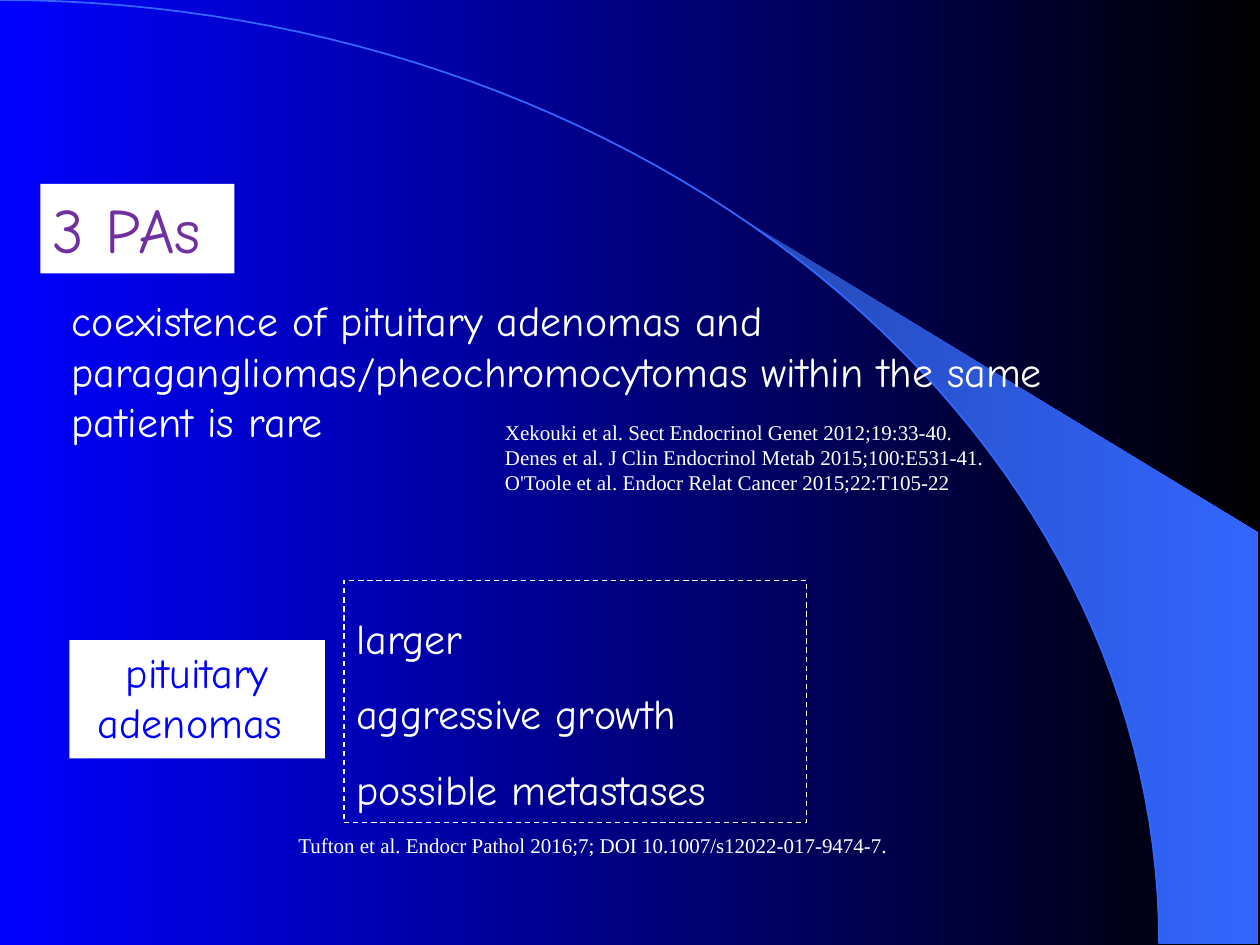
import math
from dataclasses import dataclass

import pptx
import pptx.dml.color
import pptx.enum.dml
import pptx.enum.shapes
import pptx.enum.text
import pptx.util

Inches = pptx.util.Inches
Align = pptx.enum.text.PP_ALIGN


@dataclass(frozen=True)
class Theme:
    white: str = "FFFFFF"
    black: str = "000000"
    blue: str = "0000FF"
    sky: str = "3366FF"
    dusk: str = "2449B6"
    plum: str = "7030A0"
    hand: str = "Comic Neue"
    serif: str = "Times New Roman"
    title: int = 36
    body: int = 24
    cite: int = 12


THEME = Theme()


def color(code):
    return pptx.dml.color.RGBColor.from_string(code)


def blend(fill, first, last):
    """Fill with a gradient running from left to right."""
    fill.gradient()
    fill.gradient_angle = 0
    for stop, code, place in zip(fill.gradient_stops, (first, last), (0, 1)):
        stop.color.rgb = color(code)
        stop.position = place


def arc(box, start=0, steps=60):
    """Points on a quarter ellipse from the top left to the bottom right."""
    left, top, width, height = box
    turns = [start + (math.pi / 2 - start) * i / steps for i in range(steps + 1)]
    return [(Inches(left + width * math.sin(a)),
             Inches(top + height * (1 - math.cos(a)))) for a in turns]


def outline(slide, points, close):
    pen = slide.shapes.build_freeform(*points[0])
    pen.add_line_segments(points[1:], close=close)
    shape = pen.convert_to_shape()
    shape.shadow.inherit = False
    return shape


def backdrop(slide, box):
    """Gradient ground with a bright wedge outside a large arc."""
    blend(slide.background.fill, THEME.blue, THEME.black)
    left, top, width, height = box
    edge = Inches(9.99)
    start = math.asin((5.89 - left) / width)
    corner = [(edge, Inches(top + height)), (edge, Inches(4.23))]
    wedge = outline(slide, arc(box, start) + corner, True)
    blend(wedge.fill, THEME.dusk, THEME.sky)
    wedge.line.fill.background()
    curve = outline(slide, arc(box), False)
    curve.fill.background()
    curve.line.color.rgb = color(THEME.sky)
    curve.line.width = pptx.util.Pt(1)


def write(shape, lines, size, font, ink, align=Align.LEFT, space=1.0):
    frame = shape.text_frame
    frame.word_wrap = True
    frame.vertical_anchor = pptx.enum.text.MSO_ANCHOR.TOP
    for i, line in enumerate(lines):
        para = frame.add_paragraph() if i else frame.paragraphs[0]
        para.alignment = align
        para.line_spacing = space
        run = para.add_run()
        run.text = line
        run.font.size = pptx.util.Pt(size)
        run.font.name = font
        run.font.color.rgb = color(ink)


def note(slide, box, lines, size, font):
    shape = slide.shapes.add_textbox(*map(Inches, box))
    write(shape, lines, size, font, THEME.white)


def panel(slide, box):
    shape = slide.shapes.add_shape(
        pptx.enum.shapes.MSO_SHAPE.RECTANGLE, *map(Inches, box))
    shape.shadow.inherit = False
    return shape


def label(slide, box, text, size, ink, align=Align.LEFT):
    """White plate with coloured text."""
    shape = panel(slide, box)
    shape.fill.solid()
    shape.fill.fore_color.rgb = color(THEME.white)
    shape.line.fill.background()
    write(shape, [text], size, THEME.hand, ink, align)


def traits(slide, box, lines):
    """Dashed frame around widely spaced lines."""
    shape = panel(slide, box)
    shape.fill.background()
    shape.line.color.rgb = color(THEME.white)
    shape.line.width = pptx.util.Pt(0.75)
    shape.line.dash_style = pptx.enum.dml.MSO_LINE.DASH
    write(shape, lines, THEME.body, THEME.hand, THEME.white, space=1.5)


def main():
    deck = pptx.Presentation()
    deck.slide_width, deck.slide_height = Inches(10), Inches(7.5)
    slide = deck.slides.add_slide(deck.slide_layouts[6])
    backdrop(slide, (0, 0, 9.2, 7.49))
    note(slide, (0.47, 2.29, 7.97, 1.31), [
        "coexistence of pituitary adenomas and",
        "paragangliomas/pheochromocytomas within the same patient is rare",
    ], THEME.body, THEME.hand)
    traits(slide, (2.73, 4.61, 3.67, 1.92),
           ["larger", "aggressive growth", "possible metastases"])
    note(slide, (3.91, 3.28, 4.3, 0.71), [
        "Xekouki et al. Sect Endocrinol Genet 2012;19:33-40.",
        "Denes et al. J Clin Endocrinol Metab 2015;100:E531-41.",
        "O'Toole et al. Endocr Relat Cancer 2015;22:T105-22",
    ], THEME.cite, THEME.serif)
    label(slide, (0.55, 5.08, 2.03, 0.94), "pituitary adenomas ",
          THEME.body, THEME.blue, Align.CENTER)
    label(slide, (0.32, 1.46, 1.54, 0.71), "3 PAs", THEME.title, THEME.plum)
    note(slide, (2.27, 6.56, 5, 0.3),
         ["Tufton et al. Endocr Pathol 2016;7; DOI 10.1007/s12022-017-9474-7."],
         THEME.cite, THEME.serif)
    deck.save("out.pptx")


if __name__ == "__main__":
    main()
